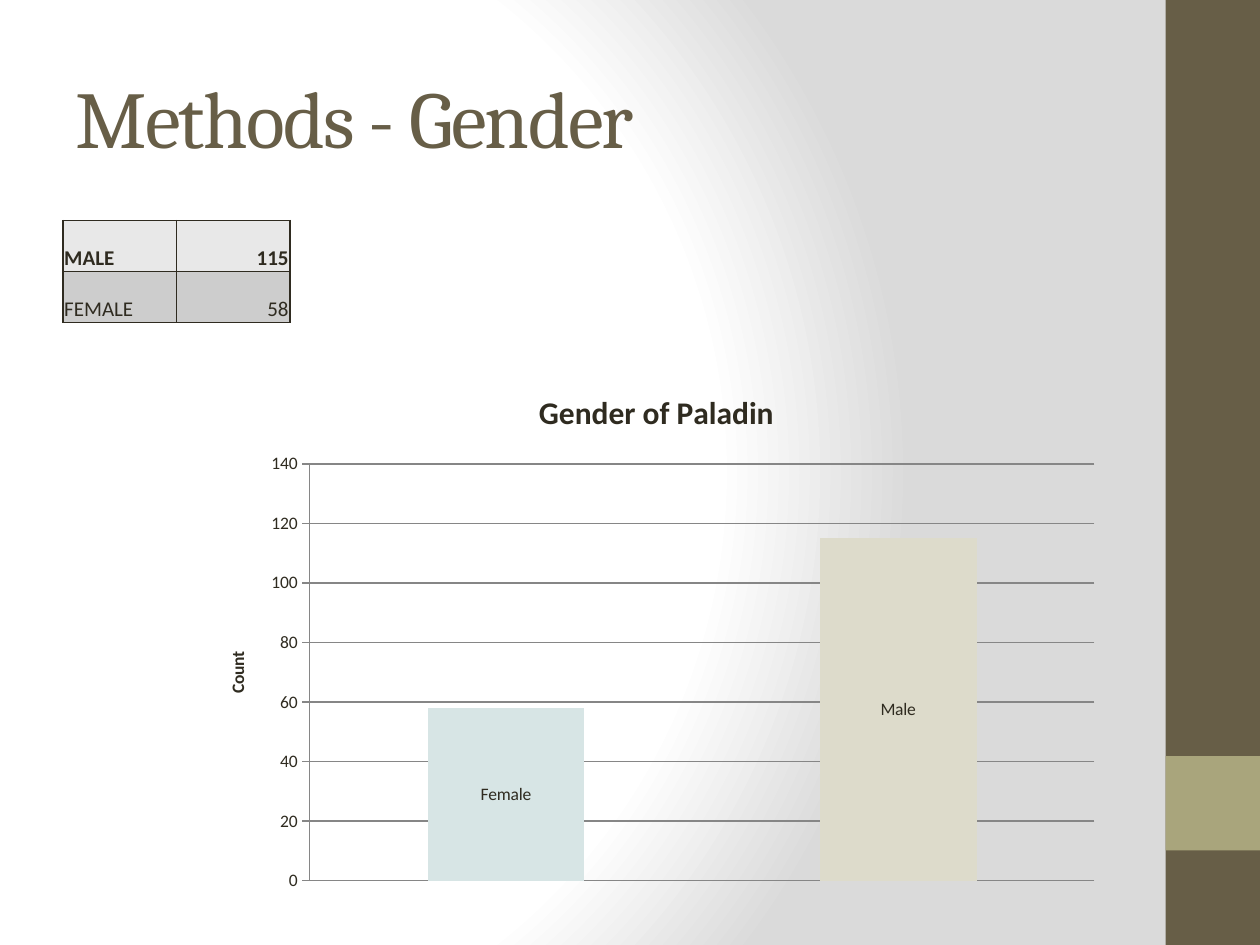
from pptx import Presentation
from pptx.chart.data import CategoryChartData
from pptx.dml.color import RGBColor
from pptx.enum.chart import XL_CHART_TYPE, XL_LABEL_POSITION, XL_TICK_MARK
from pptx.enum.shapes import MSO_SHAPE
from pptx.enum.text import MSO_ANCHOR, PP_ALIGN
from pptx.oxml import parse_xml
from pptx.oxml.ns import nsdecls, qn
from pptx.util import Inches, Pt

STACKED = XL_CHART_TYPE.COLUMN_STACKED
LABEL_CENTER = XL_LABEL_POSITION.CENTER
TICK_OUT, TICK_NONE = XL_TICK_MARK.OUTSIDE, XL_TICK_MARK.NONE
RECTANGLE = MSO_SHAPE.RECTANGLE
MIDDLE, BOTTOM = MSO_ANCHOR.MIDDLE, MSO_ANCHOR.BOTTOM
LEFT, RIGHT = PP_ALIGN.LEFT, PP_ALIGN.RIGHT
TITLE_ONLY = 5

INK, BROWN, OLIVE, GRID = "2F2B20", "675E47", "A9A57C", "868686"


def color(value):
    return RGBColor.from_string(value)


class GenderSlide:
    heading_font, body_font = "Cambria", "Calibri"

    def __init__(self, deck):
        self.slide = deck.slides.add_slide(deck.slide_layouts[TITLE_ONLY])

    def style(self, font, size, tint=INK, bold=False, name=body_font):
        font.name, font.size, font.bold = name, Pt(size), bold
        font.color.rgb = color(tint)

    def background(self, stops, center):
        stop_xml = "".join(
            f'<a:gs pos="{place * 1000}"><a:srgbClr val="{tint}"/></a:gs>'
            for place, tint in stops)
        sides = " ".join(f'{side}="{share * 1000}"' for side, share in zip("ltrb", center))
        self.slide.element.cSld.insert(0, parse_xml(
            f'<p:bg {nsdecls("p", "a")}><p:bgPr><a:gradFill rotWithShape="1">'
            f'<a:gsLst>{stop_xml}</a:gsLst>'
            f'<a:path path="circle"><a:fillToRect {sides}/></a:path>'
            '</a:gradFill><a:effectLst/></p:bgPr></p:bg>'))

    def band(self, left, top, width, height, fill):
        box = self.slide.shapes.add_shape(
            RECTANGLE, Inches(left), Inches(top), Inches(width), Inches(height))
        box.shadow.inherit = False
        box.fill.solid()
        box.fill.fore_color.rgb = color(fill)
        box.line.fill.background()

    def title(self, text, left, top, width, height):
        box = self.slide.shapes.title
        box.left, box.top = Inches(left), Inches(top)
        box.width, box.height = Inches(width), Inches(height)
        box.text_frame.text = text
        box.text_frame.vertical_anchor = MIDDLE
        para = box.text_frame.paragraphs[0]
        para.alignment = LEFT
        span = para.runs[0]
        self.style(span.font, 46, BROWN, name=self.heading_font)
        span.font._element.set("spc", "-100")

    def cell_borders(self, cell):
        properties = cell._tc.get_or_add_tcPr()
        for index, side in enumerate(("lnL", "lnR", "lnT", "lnB")):
            properties.insert(index, parse_xml(
                f'<a:{side} {nsdecls("a")} w="{Pt(1)}"><a:solidFill>'
                f'<a:srgbClr val="{INK}"/></a:solidFill></a:{side}>'))

    def table(self, rows, fills, left, top, width, height):
        table = self.slide.shapes.add_table(
            len(rows), len(rows[0]), Inches(left), Inches(top),
            Inches(width), Inches(height)).table
        for row, (texts, fill) in enumerate(zip(rows, fills)):
            for column, text in enumerate(texts):
                cell = table.cell(row, column)
                cell.text = text
                cell.vertical_anchor = BOTTOM
                cell.margin_left = cell.margin_right = cell.margin_top = Inches(0.01)
                cell.margin_bottom = 0
                cell.fill.solid()
                cell.fill.fore_color.rgb = color(fill)
                para = cell.text_frame.paragraphs[0]
                para.alignment = RIGHT if column else LEFT
                self.style(para.font, 12, bold=row == 0)
                self.cell_borders(cell)

    def chart_heading(self, owner, text, size):
        owner.text_frame.text = text
        self.style(owner.text_frame.paragraphs[0].font, size, bold=True)

    def column_chart(self, heading, axis_heading, bars, left, top, width, height):
        data = CategoryChartData()
        data.categories = [str(number) for number in range(1, len(bars) + 1)]
        data.add_series("Series 1", [value for _, value, _ in bars])
        chart = self.slide.shapes.add_chart(
            STACKED, Inches(left), Inches(top), Inches(width), Inches(height), data).chart
        self.style(chart.font, 10)
        chart.has_legend = False
        chart.has_title = True
        self.chart_heading(chart.chart_title, heading, 18)

        # Axes
        chart.category_axis.visible = False
        axis = chart.value_axis
        axis.minimum_scale, axis.maximum_scale, axis.major_unit = 0, 140, 20
        axis.major_tick_mark, axis.minor_tick_mark = TICK_OUT, TICK_NONE
        axis.has_major_gridlines = True
        for line in (axis.format.line, axis.major_gridlines.format.line):
            line.color.rgb = color(GRID)
            line.width = Pt(0.75)
        axis.has_title = True
        self.chart_heading(axis.axis_title, axis_heading, 10)

        # Bars with their names
        plot = chart.plots[0]
        plot.gap_width, plot.overlap, plot.vary_by_categories = 150, 100, False
        series = plot.series[0]
        series.format.fill.solid()
        series.format.fill.fore_color.rgb = color(bars[0][2])
        for index, (name, _, fill) in enumerate(bars):
            point = series.points[index]
            point.format.fill.solid()
            point.format.fill.fore_color.rgb = color(fill)
            label = point.data_label
            label.text_frame.text = name
            self.style(label.text_frame.paragraphs[0].font, 10)
            label.position = LABEL_CENTER
        self.plot_area(chart, x=0.12, y=0.18, w=0.86, h=0.78)

    def plot_area(self, chart, **shares):
        area = chart.element.chart.plotArea
        for layout in area.findall(qn("c:layout")):
            area.remove(layout)
        places = "".join(f'<c:{key} val="{share}"/>' for key, share in shares.items())
        area.insert(0, parse_xml(
            f'<c:layout {nsdecls("c")}><c:manualLayout><c:layoutTarget val="inner"/>'
            '<c:xMode val="edge"/><c:yMode val="edge"/>'
            f'{places}</c:manualLayout></c:layout>'))


def main():
    deck = Presentation()
    deck.slide_width, deck.slide_height = Inches(10), Inches(7.5)
    page = GenderSlide(deck)

    # Backdrop and side bands
    page.background([(0, "FFFFFF"), (75, "FFFFFF"), (100, "DADADA")], (20, 50, 100, 50))
    page.band(9.25, 0, 0.75, 7.5, BROWN)
    page.band(9.25, 6, 0.75, 0.75, OLIVE)

    # Content
    page.title("Methods - Gender", 0.5, 0.3, 8.33, 1.25)
    page.table([("MALE", "115"), ("FEMALE", "58")], ("E8E8E8", "CDCDCD"),
               0.5, 1.75, 1.8, 0.81)
    page.column_chart("Gender of Paladin", "Count",
                      [("Female", 58, "D7E5E5"), ("Male", 115, "DDDBCB")],
                      1.59, 2.92, 7.24, 4.24)
    deck.save("out.pptx")


if __name__ == "__main__":
    main()
